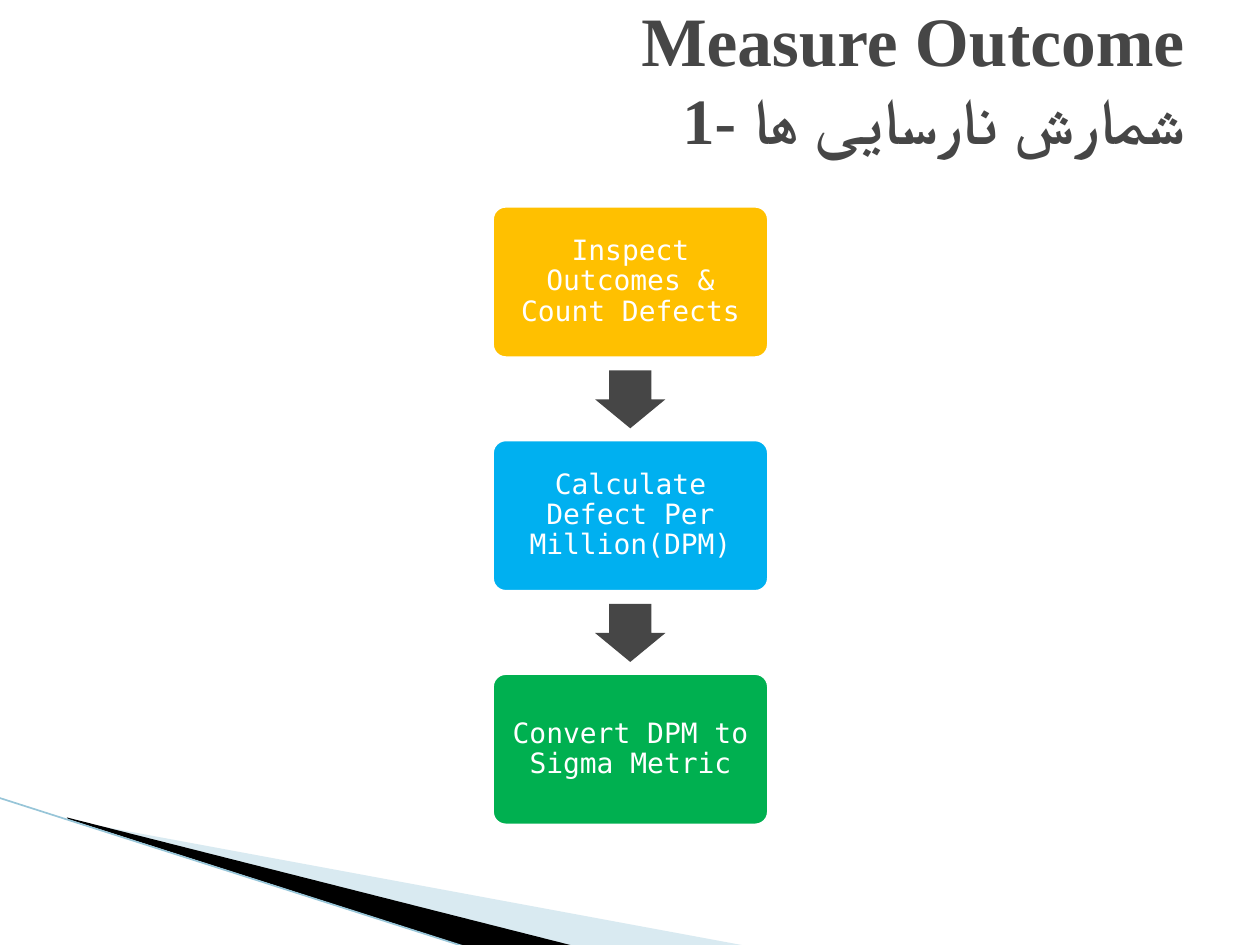
from dataclasses import dataclass

from lxml import etree
from pptx import Presentation
from pptx.dml.color import RGBColor
from pptx.enum.shapes import MSO_CONNECTOR, MSO_SHAPE
from pptx.enum.text import MSO_ANCHOR, PP_ALIGN
from pptx.oxml.ns import qn
from pptx.util import Cm, Pt

ROUND = MSO_SHAPE.ROUNDED_RECTANGLE
ARROW = MSO_SHAPE.RIGHT_ARROW
LINE = MSO_CONNECTOR.STRAIGHT
MIDDLE, BOTTOM = MSO_ANCHOR.MIDDLE, MSO_ANCHOR.BOTTOM
CENTER, RIGHT = PP_ALIGN.CENTER, PP_ALIGN.RIGHT


@dataclass(frozen=True)
class Theme:
    ink: str = "464646"
    white: str = "FFFFFF"
    black: str = "000000"
    pale: str = "A0CBDC"
    edge: str = "97C5D8"
    steps: tuple = ("FFC000", "00B0F0", "00B050")
    serif: str = "Times New Roman"
    mono: str = "DejaVu Sans Mono"
    head: float = 39.6
    sub: float = 36.9
    body: float = 16


class Deck:
    """Draws styled elements on the current slide."""

    def __init__(self, theme):
        self.theme = theme
        self.show = Presentation()
        self.show.slide_width, self.show.slide_height = Cm(25.4), Cm(19.05)
        self.slide = self.show.slides.add_slide(self.show.slide_layouts[6])
        self.shapes = self.slide.shapes

    def paint(self, shape, color):
        shape.shadow.inherit = False
        shape.fill.solid()
        shape.fill.fore_color.rgb = RGBColor.from_string(color)
        shape.line.fill.background()

    def style(self, run, face, size, color, bold=False):
        font = run.font
        font.name, font.size, font.bold = face, Pt(size), bold
        font.color.rgb = RGBColor.from_string(color)
        etree.SubElement(run._r.get_or_add_rPr(), qn("a:cs"), typeface=face)

    def wedge(self, points, color, alpha=None):
        first, *rest = [(Cm(x), Cm(y)) for x, y in points]
        pen = self.shapes.build_freeform(*first)
        pen.add_line_segments(rest, close=True)
        shape = pen.convert_to_shape()
        self.paint(shape, color)
        if alpha:
            tint = shape._element.spPr.find(".//" + qn("a:srgbClr"))
            etree.SubElement(tint, qn("a:alpha"), val=str(alpha * 1000))

    def rule(self, start, end, color, width):
        line = self.shapes.add_connector(LINE, *map(Cm, start + end))
        line.line.color.rgb = RGBColor.from_string(color)
        line.line.width = Pt(width)
        etree.SubElement(line._element.spPr, qn("a:effectLst"))

    def step(self, box, text, color):
        shape = self.shapes.add_shape(ROUND, *map(Cm, box))
        shape.adjustments[0] = 0.1
        self.paint(shape, color)
        shape.line.color.rgb = RGBColor.from_string(self.theme.white)
        shape.line.width = Pt(4.33)
        frame = shape.text_frame
        frame.text = text
        frame.word_wrap, frame.vertical_anchor = True, MIDDLE
        frame.margin_left = frame.margin_right = Cm(0.18)
        frame.margin_top = frame.margin_bottom = Cm(0.18)
        para = frame.paragraphs[0]
        para.alignment, para.line_spacing = CENTER, 0.9
        self.style(para.runs[0], self.theme.mono, self.theme.body, self.theme.white)

    def arrow(self, box):
        shape = self.shapes.add_shape(ARROW, *map(Cm, box))
        shape.rotation = 90
        shape.adjustments[0], shape.adjustments[1] = 0.6, 0.5
        self.paint(shape, self.theme.ink)

    def title(self, box, lines):
        frame = self.shapes.add_textbox(*map(Cm, box)).text_frame
        frame.text = "\v".join(lines)
        frame.word_wrap, frame.vertical_anchor = True, BOTTOM
        frame.margin_bottom = Cm(0.76)
        para = frame.paragraphs[0]
        para.alignment = RIGHT
        for run, size in zip(para.runs, (self.theme.head, self.theme.sub)):
            self.style(run, self.theme.serif, size, self.theme.ink, True)


def main():
    theme = Theme()
    deck = Deck(theme)
    deck.wedge([(1.4, 16.54), (15.11, 19.08), (11.58, 19.08), (1.4, 16.51)], theme.pale, 40)
    deck.wedge([(1.35, 16.48), (11.61, 19.08), (9.45, 19.1), (1.37, 16.51)], theme.black)
    deck.rule((-0.03, 16.08), (9.42, 19.1), theme.edge, 0.95)

    steps = (
        "Inspect Outcomes & Count Defects",
        "Calculate Defect Per Million(DPM)",
        "Convert DPM to Sigma Metric",
    )
    top, pitch = 4.11, 4.71
    for i, (text, color) in enumerate(zip(steps, theme.steps)):
        y = top + i * pitch
        if i:
            deck.arrow((12.12, y - 1.48, 1.17, 1.42))
        deck.step((9.88, y, 5.66, 3.15), text, color)

    deck.title((1.27, 0.76, 22.86, 3.18), ("Measure Outcome", "1- شمارش نارسایی ها"))
    deck.show.save("out.pptx")


if __name__ == "__main__":
    main()
